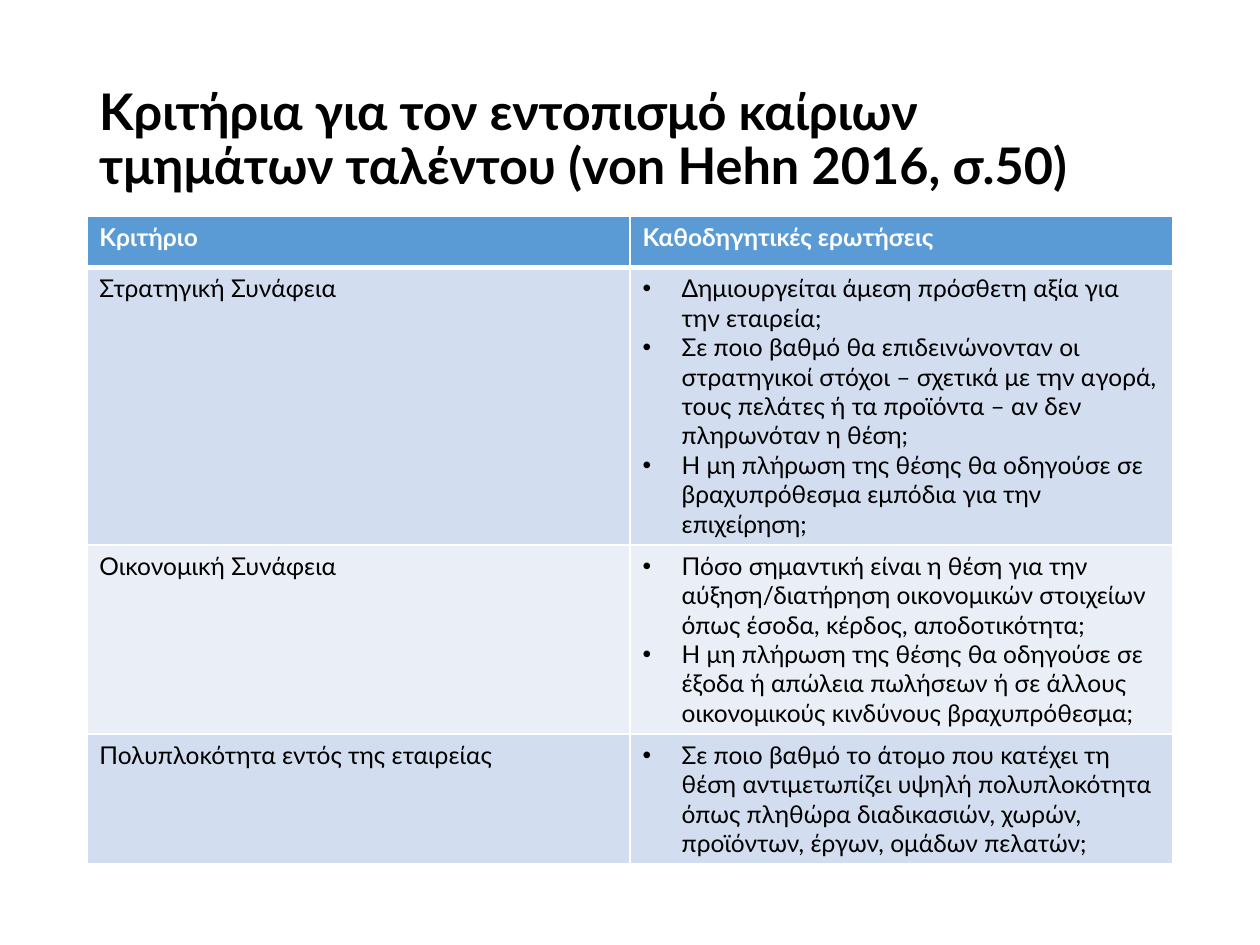
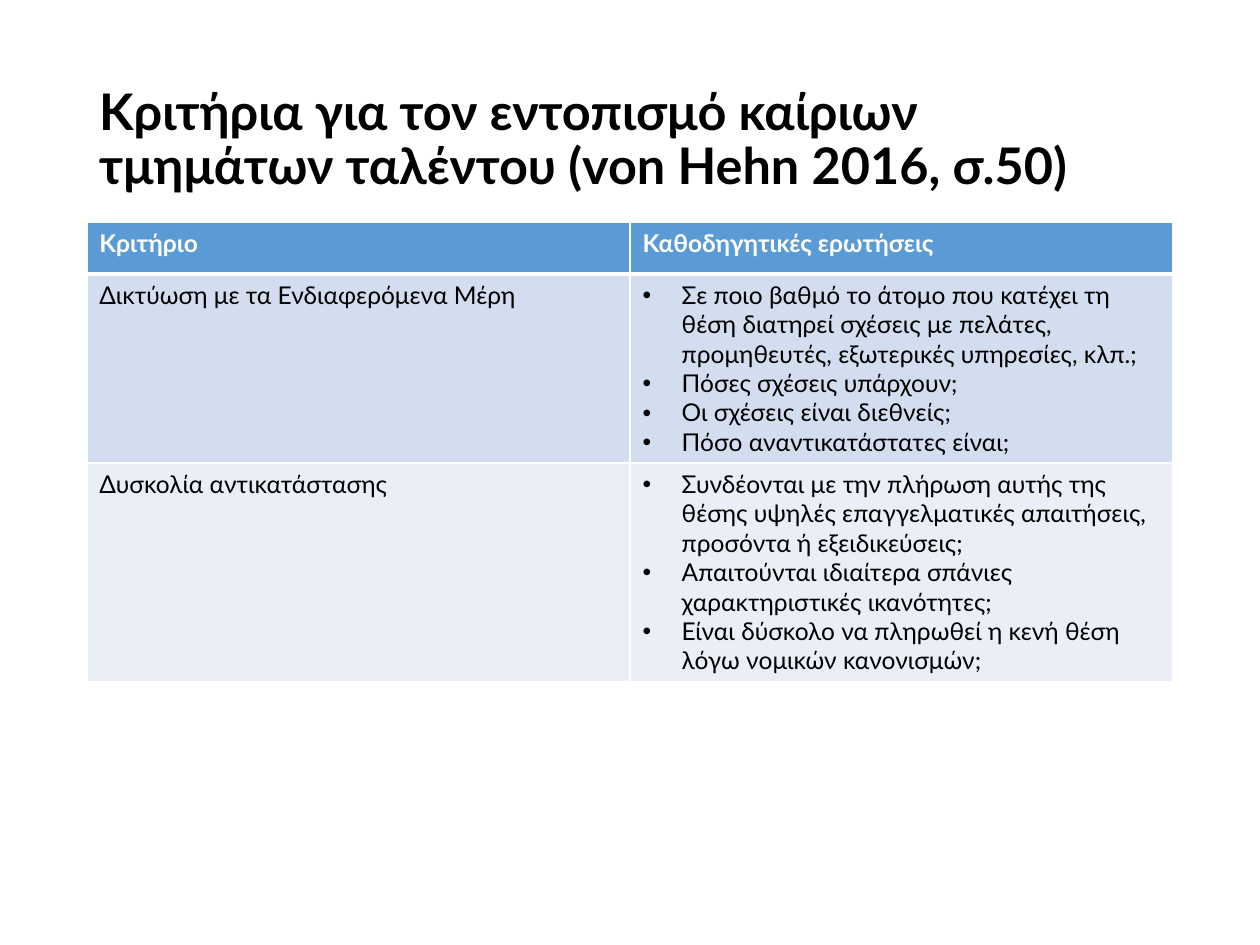
"""Build two slides of criteria tables for identifying key talent segments."""
from lxml.etree import SubElement
from pptx import Presentation
from pptx.dml.color import RGBColor
from pptx.enum.text import MSO_ANCHOR
from pptx.oxml.ns import qn
from pptx.util import Cm, Pt

BLACK = RGBColor(0x00, 0x00, 0x00)
WHITE = RGBColor(0xFF, 0xFF, 0xFF)
HEADER_BLUE = RGBColor(0x5B, 0x9B, 0xD5)
BAND_COLORS = [RGBColor(0xD2, 0xDE, 0xEF), RGBColor(0xEA, 0xEF, 0xF7)]
FONT = "Lato"
TITLE = "Κριτήρια για τον εντοπισμό καίριων τμημάτων ταλέντου (von Hehn 2016, σ.50)"
HEADERS = ["Κριτήριο", "Καθοδηγητικές ερωτήσεις"]
LEFT, WIDTH = Cm(1.75), Cm(21.9)
HEADER_HEIGHT = Cm(1.04)
BULLET_INDENT = Cm(0.79)

PAGES = [
    (Cm(4.35), [
        ("Στρατηγική Συνάφεια", Cm(5.56), [
            "Δημιουργείται άμεση πρόσθετη αξία για την εταιρεία;",
            "Σε ποιο βαθμό θα επιδεινώνονταν οι στρατηγικοί στόχοι – σχετικά με την αγορά, "
            "τους πελάτες ή τα προϊόντα – αν δεν πληρωνόταν η θέση;",
            "Η μη πλήρωση της θέσης θα οδηγούσε σε βραχυπρόθεσμα εμπόδια για την επιχείρηση;",
        ]),
        ("Οικονομική Συνάφεια", Cm(3.8), [
            "Πόσο σημαντική είναι η θέση για την αύξηση/διατήρηση οικονομικών στοιχείων "
            "όπως έσοδα, κέρδος, αποδοτικότητα;",
            "Η μη πλήρωση της θέσης θα οδηγούσε σε έξοδα ή απώλεια πωλήσεων "
            "ή σε άλλους οικονομικούς κινδύνους βραχυπρόθεσμα;",
        ]),
        ("Πολυπλοκότητα εντός της εταιρείας", Cm(2.6), [
            "Σε ποιο βαθμό το άτομο που κατέχει τη θέση αντιμετωπίζει υψηλή πολυπλοκότητα "
            "όπως πληθώρα διαδικασιών, χωρών, προϊόντων, έργων, ομάδων πελατών;",
        ]),
    ]),
    (Cm(4.48), [
        ("Δικτύωση με τα Ενδιαφερόμενα Μέρη", Cm(3.8), [
            "Σε ποιο βαθμό το άτομο που κατέχει τη θέση διατηρεί σχέσεις με πελάτες, "
            "προμηθευτές, εξωτερικές υπηρεσίες, κλπ.;",
            "Πόσες σχέσεις υπάρχουν;",
            "Οι σχέσεις είναι διεθνείς;",
            "Πόσο αναντικατάστατες είναι;",
        ]),
        ("Δυσκολία αντικατάστασης", Cm(4.38), [
            "Συνδέονται με την πλήρωση αυτής της θέσης υψηλές επαγγελματικές απαιτήσεις, "
            "προσόντα ή εξειδικεύσεις;",
            "Απαιτούνται ιδιαίτερα σπάνιες χαρακτηριστικές ικανότητες;",
            "Είναι δύσκολο να πληρωθεί η κενή θέση λόγω νομικών κανονισμών;",
        ]),
    ]),
]


def add_span(para, text, size, color, bold):
    span = para.add_run()
    span.text = text
    span.font.name = FONT
    span.font.size = Pt(size)
    span.font.bold = bold
    span.font.color.rgb = color


def fill_cell(cell, texts, fill, color, bold=False, bulleted=False):
    properties = cell._tc.get_or_add_tcPr()
    for side in ("L", "R", "T", "B"):
        line_width = Pt(3) if bold and side == "B" else Pt(1)
        line = SubElement(properties, qn(f"a:ln{side}"), w=str(line_width))
        solid = SubElement(line, qn("a:solidFill"))
        SubElement(solid, qn("a:srgbClr"), val=str(WHITE))
    cell.fill.solid()
    cell.fill.fore_color.rgb = fill
    frame = cell.text_frame
    for index, text in enumerate(texts):
        para = frame.add_paragraph() if index else frame.paragraphs[0]
        if bulleted:
            settings = para._p.get_or_add_pPr()
            settings.set("marL", str(BULLET_INDENT))
            settings.set("indent", str(-BULLET_INDENT))
            SubElement(settings, qn("a:buFont"), typeface="Arial")
            SubElement(settings, qn("a:buChar"), char="•")
        add_span(para, text, 14, color, bold)


deck = Presentation()
deck.slide_width, deck.slide_height = Cm(25.4), Cm(19.05)

for table_top, criteria in PAGES:
    page = deck.slides.add_slide(deck.slide_layouts[6])

    box = page.shapes.add_textbox(LEFT, Cm(1.01), WIDTH, Cm(3.68))
    box.text_frame.word_wrap = True
    box.text_frame.vertical_anchor = MSO_ANCHOR.MIDDLE
    title = box.text_frame.paragraphs[0]
    title.line_spacing = 0.9
    add_span(title, TITLE, 28.8, BLACK, True)

    table_height = HEADER_HEIGHT + sum(height for _, height, _ in criteria)
    table = page.shapes.add_table(
        len(criteria) + 1, len(HEADERS), LEFT, table_top, WIDTH, table_height).table
    table.rows[0].height = HEADER_HEIGHT
    for column, header in enumerate(HEADERS):
        fill_cell(table.cell(0, column), [header], HEADER_BLUE, WHITE, bold=True)
    for row, (criterion, height, questions) in enumerate(criteria, start=1):
        band = BAND_COLORS[(row - 1) % 2]
        table.rows[row].height = height
        fill_cell(table.cell(row, 0), [criterion], band, BLACK)
        fill_cell(table.cell(row, 1), questions, band, BLACK, bulleted=True)

deck.save("out.pptx")
